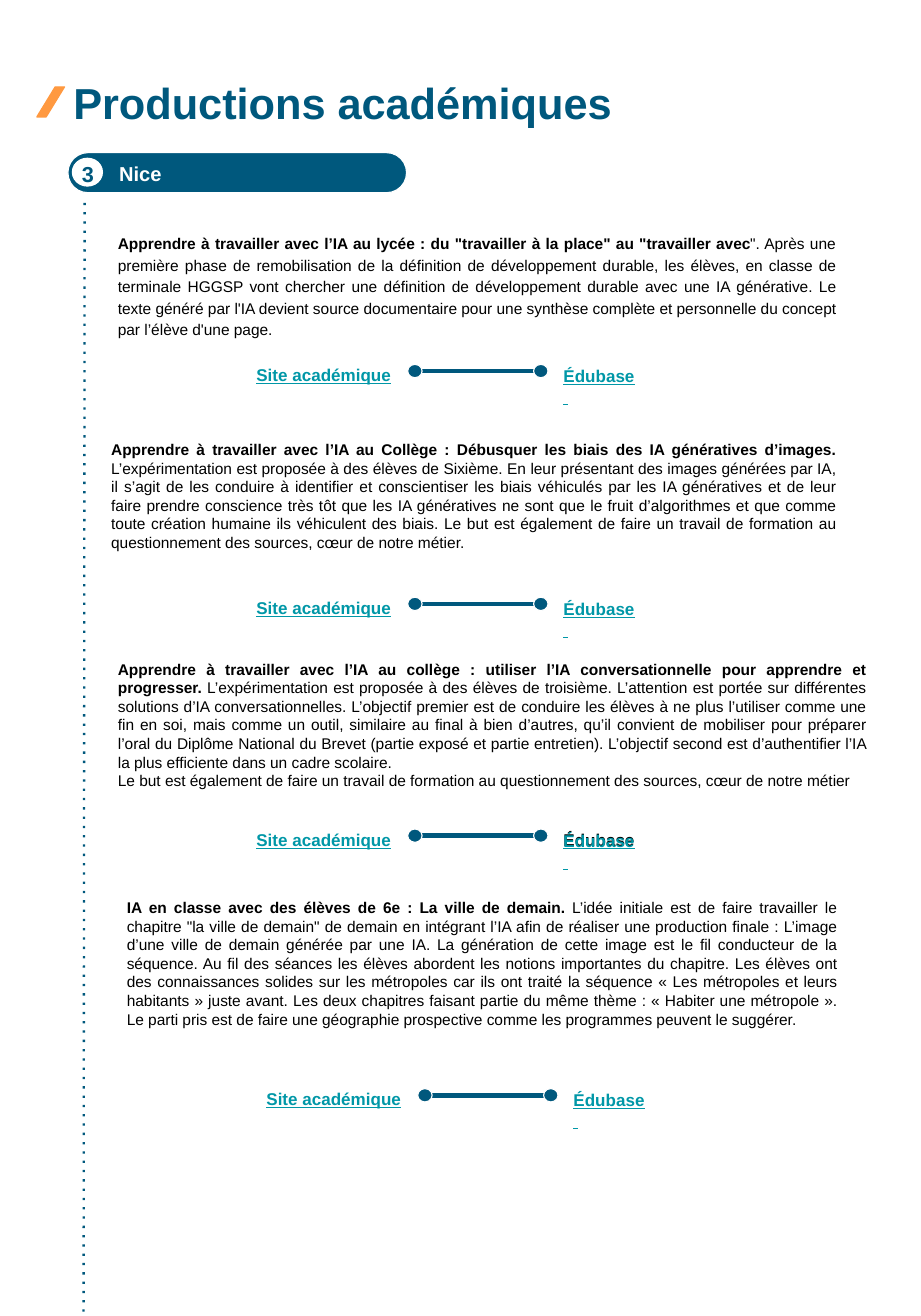
from lxml.etree import SubElement
from pptx import Presentation
from pptx.dml.color import RGBColor
from pptx.enum.dml import MSO_LINE
from pptx.enum.shapes import MSO_CONNECTOR, MSO_SHAPE
from pptx.enum.text import PP_ALIGN
from pptx.oxml.ns import qn
from pptx.util import Cm, Pt

TITLE = "Productions académiques"
BADGE = "3"
PLACE = "Nice"
SITE = "Site académique"
BASE = "Édubase"
BLOCKS = [
    {
        "box": (96, 198, 664, 180), "lead": 1.15,
        "bold": "Apprendre à travailler avec l’IA au lycée : du \"travailler à la place\" au \"travailler avec",
        "plain": "\". Après une première phase de remobilisation de la définition de développement durable, les élèves, en classe de terminale HGGSP vont chercher une définition de développement durable avec une IA générative. Le texte généré par l'IA devient source documentaire pour une synthèse complète et personnelle du concept par l’élève d'une page.",
    },
    {
        "box": (90, 385, 670, 155),
        "bold": "Apprendre à travailler avec l’IA au Collège : Débusquer les biais des IA génératives d’images. ",
        "plain": "L’expérimentation est proposée à des élèves de Sixième. En leur présentant des images générées par IA, il s’agit de les conduire à identifier et conscientiser les biais véhiculés par les IA génératives et de leur faire prendre conscience très tôt que les IA génératives ne sont que le fruit d’algorithmes et que comme toute création humaine ils véhiculent des biais. Le but est également de faire un travail de formation au questionnement des sources, cœur de notre métier.",
    },
    {
        "box": (96, 582, 691, 155),
        "bold": "Apprendre à travailler avec l’IA au collège : utiliser l’IA conversationnelle pour apprendre et progresser. ",
        "plain": "L’expérimentation est proposée à des élèves de troisième. L’attention est portée sur différentes solutions d’IA conversationnelles. L’objectif premier est de conduire les élèves à ne plus l’utiliser comme une fin en soi, mais comme un outil, similaire au final à bien d’autres, qu’il convient de mobiliser pour préparer l’oral du Diplôme National du Brevet (partie exposé et partie entretien). L’objectif second est d’authentifier l’IA la plus efficiente dans un cadre scolaire.",
        "more": "Le but est également de faire un travail de formation au questionnement des sources, cœur de notre métier",
    },
    {
        "box": (104, 796, 657, 92),
        "bold": "IA en classe avec des élèves de 6e : La ville de demain. ",
        "plain": "L’idée initiale est de faire travailler le chapitre \"la ville de demain\" de demain en intégrant l’IA afin de réaliser une production finale : L’image d’une ville de demain générée par une IA. La génération de cette image est le fil conducteur de la séquence. Au fil des séances les élèves abordent les notions importantes du chapitre. Les élèves ont des connaissances solides sur les métropoles car ils ont traité la séquence « Les métropoles et leurs habitants » juste avant. Les deux chapitres faisant partie du même thème : « Habiter une métropole ». Le parti pris est de faire une géographie prospective comme les programmes peuvent le suggérer.",
    },
]
LINKS = [(183, 318), (183, 527), (183, 735), (192, 968)]
COLORS = {"blue": "00587D", "orange": "FF9940", "teal": "0097A7", "black": "000000", "white": "FFFFFF"}
FONT = "Arial"
PX = 9144
HEIGHT = 1208

deck = Presentation()
deck.slide_width, deck.slide_height = Cm(21), Cm(30)
slide = deck.slides.add_slide(deck.slide_layouts[6])
shapes = slide.shapes


def tint(name):
    return RGBColor.from_string(COLORS[name])


def scale(box):
    return [side * PX for side in box]


def draw_shape(kind, box, fill, edge, bend=None):
    shape = shapes.add_shape(kind, *scale(box))
    shape.shadow.inherit = False
    shape.fill.solid()
    shape.fill.fore_color.rgb = tint(fill)
    shape.line.color.rgb = tint(edge)
    shape.line.width = Pt(0.75)
    if bend is not None:
        shape.adjustments[0] = bend


def draw_line(start, end, width):
    line = shapes.add_connector(MSO_CONNECTOR.STRAIGHT, *scale(start + end))
    line.line.color.rgb = tint("blue")
    line.line.width = Pt(width)
    SubElement(line._element.spPr, qn("a:effectLst"))
    return line


def add_frame(box, pad=10):
    frame = shapes.add_textbox(*scale(box)).text_frame
    frame.word_wrap = True
    frame.margin_left = frame.margin_right = 10 * PX
    frame.margin_top = frame.margin_bottom = pad * PX
    return frame


def style(para, size, color, align=PP_ALIGN.LEFT):
    para.alignment = align
    para.font.name = FONT
    para.font.size = Pt(size)
    para.font.color.rgb = tint(color)


def add_label(box, lines, size, color, align=PP_ALIGN.LEFT, pad=10, link=False):
    frame = add_frame(box, pad)
    frame.text = "\n".join(lines)
    for para in frame.paragraphs:
        style(para, size, color, align)
        para.font.bold = True
        if link:
            para.font.underline = True


def add_block(block):
    frame = add_frame(block["box"])
    para = frame.paragraphs[0]
    head = para.add_run()
    head.text = block["bold"]
    head.font.bold = True
    para.add_run().text = block["plain"]
    if "more" in block:
        frame.add_paragraph().text = block["more"]
    for para in frame.paragraphs:
        style(para, 10, "black", PP_ALIGN.JUSTIFY)
        para.line_spacing = block.get("lead", 1.0)


def add_links(left, top):
    draw_line((left + 186, top + 15), (left + 307, top + 15), 3)
    add_label((left + 313, top, 147, 57), [BASE, " "], 11, "teal", link=True)
    add_label((left, top, 178, 39), [SITE], 11, "teal", PP_ALIGN.RIGHT, link=True)
    for shift in (183, 296):
        draw_shape(MSO_SHAPE.OVAL, (left + shift, top + 9, 13, 12), "blue", "white")


dots = draw_line((76, 182), (75, HEIGHT), 1.5)
dots.line.dash_style = MSO_LINE.ROUND_DOT
dots._element.find(".//" + qn("a:prstDash")).set("val", "dot")

add_label((56, 58, 723, 67), [TITLE], 28, "blue")
draw_shape(MSO_SHAPE.PARALLELOGRAM, (33, 78, 25, 27), "orange", "orange", 0.66)

draw_shape(MSO_SHAPE.ROUNDED_RECTANGLE, (61, 137, 304, 36), "blue", "white", 0.5)
add_label((97, 140, 295, 32), [PLACE], 13, "white", pad=5)
draw_shape(MSO_SHAPE.OVAL, (65, 142, 27, 25), "white", "white")
add_label((58, 134, 42, 44), [BADGE], 14, "blue", PP_ALIGN.CENTER)

for block in BLOCKS:
    add_block(block)

left, top = LINKS[2]
add_label((left + 313, top, 147, 57), [BASE], 11, "black")
for left, top in LINKS:
    add_links(left, top)

deck.save("out.pptx")
